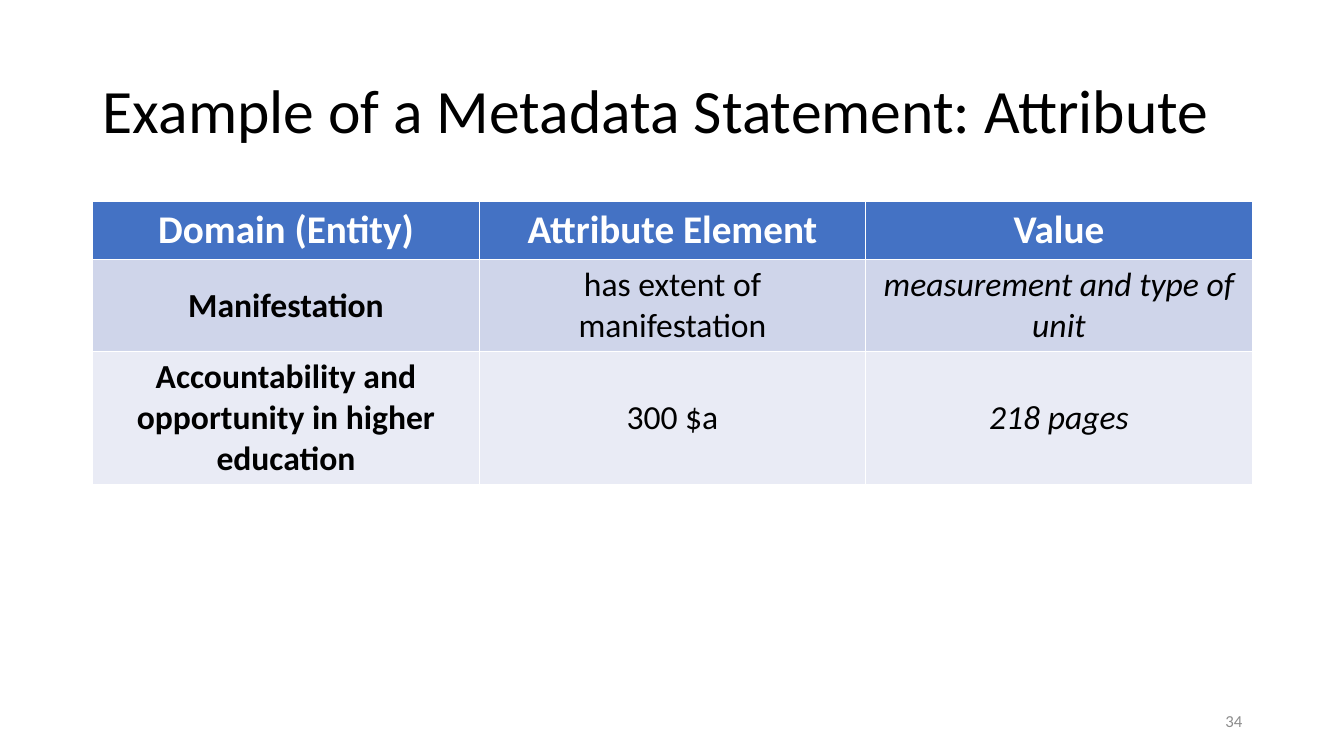
"""Builds a slide showing a metadata statement as a table."""
from dataclasses import dataclass

from pptx import Presentation
from pptx.dml.color import RGBColor
from pptx.enum.text import MSO_ANCHOR as Anchor, PP_ALIGN as Align
from pptx.util import Inches, Pt

FONT = "Calibri"
BLACK = "000000"


@dataclass(frozen=True)
class RowStyle:
    fill: str
    color: str
    size: int
    bold: tuple[bool, ...]
    italic: tuple[bool, ...]


@dataclass(frozen=True)
class StatementRow:
    texts: tuple[str, ...]
    style: RowStyle


def body_style(fill: str) -> RowStyle:
    return RowStyle(fill, BLACK, 24, (True, False, False), (False, False, True))


HEADER = RowStyle("4472C4", "FFFFFF", 28, (True,) * 3, (False,) * 3)
ROWS = (
    StatementRow(("Domain (Entity)", "Attribute Element", "Value"), HEADER),
    StatementRow(
        ("Manifestation", "has extent of manifestation", "measurement and type of unit"),
        body_style("CFD5EA"),
    ),
    StatementRow(
        ("Accountability and opportunity in higher education", "300 $a", "218 pages"),
        body_style("E9EBF5"),
    ),
)


def rgb(value: str) -> RGBColor:
    return RGBColor.from_string(value)


def write(frame, text: str, size: int, color: str, align: Align,
          bold: bool = False, italic: bool = False) -> None:
    frame.text = text
    para = frame.paragraphs[0]
    para.alignment = align
    font = para.font
    font.name, font.size = FONT, Pt(size)
    font.bold, font.italic = bold, italic
    font.color.rgb = rgb(color)


def add_title(page, text: str) -> None:
    title = page.shapes.title
    title.left, title.top = Inches(0.92), Inches(0.4)
    title.width, title.height = Inches(11.5), Inches(1.45)
    frame = title.text_frame
    frame.vertical_anchor = Anchor.MIDDLE
    write(frame, text, 44, BLACK, Align.LEFT)
    frame.paragraphs[0].line_spacing = 0.9


def add_statement_table(page, rows: tuple[StatementRow, ...]) -> None:
    row_height = Inches(0.41)
    table = page.shapes.add_table(
        len(rows), len(rows[0].texts), Inches(0.92), Inches(2),
        Inches(11.5), row_height * len(rows)
    ).table
    for row_index, row in enumerate(rows):
        style = row.style
        for column, text in enumerate(row.texts):
            cell = table.cell(row_index, column)
            cell.fill.solid()
            cell.fill.fore_color.rgb = rgb(style.fill)
            cell.vertical_anchor = Anchor.MIDDLE
            write(cell.text_frame, text, style.size, style.color, Align.CENTER,
                  style.bold[column], style.italic[column])


def add_page_number(page, number: int) -> None:
    box = page.shapes.add_textbox(Inches(9.42), Inches(6.95), Inches(3), Inches(0.4))
    frame = box.text_frame
    frame.word_wrap = True
    frame.vertical_anchor = Anchor.MIDDLE
    write(frame, str(number), 12, "8C8C8C", Align.RIGHT)


def main() -> None:
    deck = Presentation()
    deck.slide_width, deck.slide_height = Inches(13.33), Inches(7.5)
    page = deck.slides.add_slide(deck.slide_layouts.get_by_name("Title Only"))
    add_title(page, "Example of a Metadata Statement: Attribute")
    add_statement_table(page, ROWS)
    add_page_number(page, 34)
    deck.save("out.pptx")


if __name__ == "__main__":
    main()
